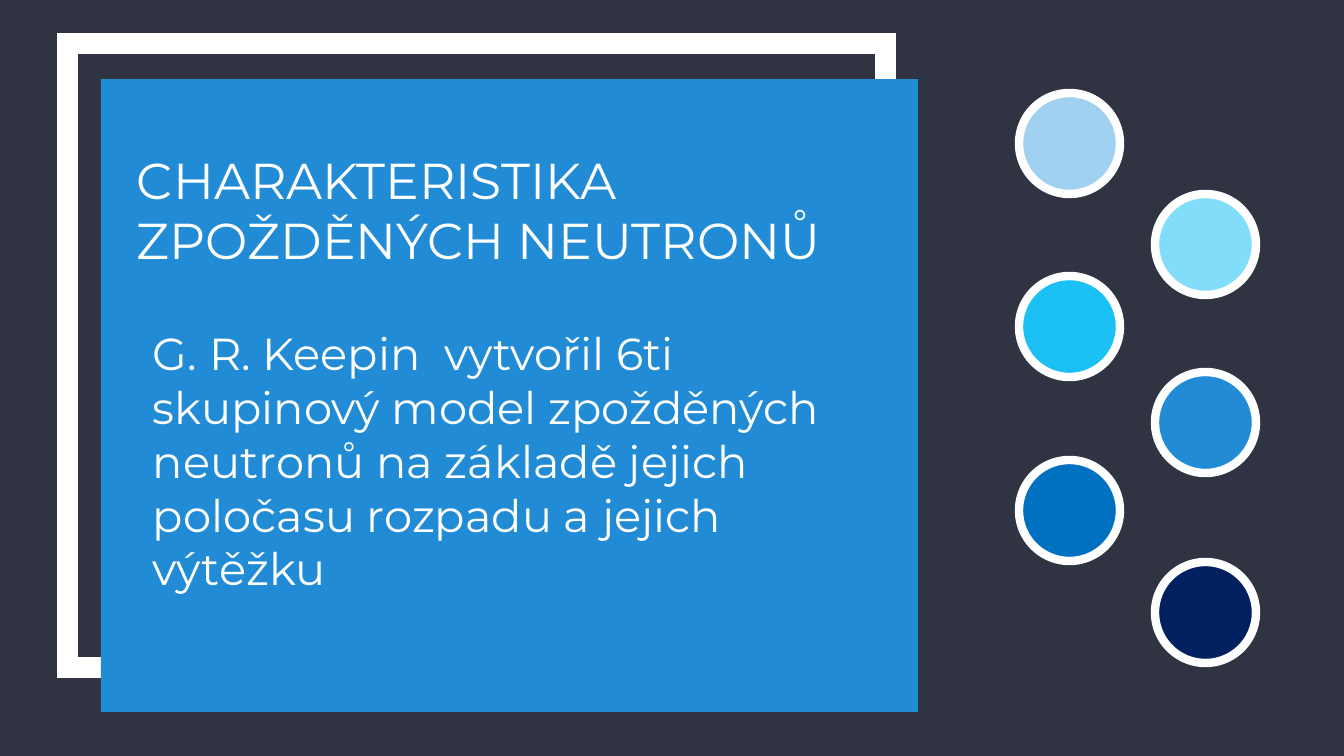
from dataclasses import dataclass

from lxml import etree
from pptx import Presentation
from pptx import util as u
from pptx.dml.color import RGBColor
from pptx.enum import shapes, text
from pptx.oxml import ns

EMU_PER_PX = 914400 / 100.8


@dataclass(frozen=True)
class Theme:
    background: str = "2F3342"
    panel: str = "218CD5"
    white: str = "FFFFFF"
    left_dots: tuple = ("A1D1F1", "1BC1F5", "0070C0")
    right_dots: tuple = ("82DDFA", "218CD5", "002060")
    font: str = "Montserrat"
    title_size: int = 36
    body_size: int = 32
    frame_width: int = 15
    dot_outline: int = 6


THEME = Theme()


def px(length):
    return u.Emu(round(length * EMU_PER_PX))


def color(value):
    return RGBColor.from_string(value)


def add_figure(slide, kind, box, fill=None, line=None, line_width=0):
    shape = slide.shapes.add_shape(kind, *map(px, box))
    shape.shadow.inherit = False
    if fill:
        shape.fill.solid()
        shape.fill.fore_color.rgb = color(fill)
    else:
        shape.fill.background()
    if line:
        shape.line.color.rgb = color(line)
        shape.line.width = u.Pt(line_width)
    else:
        shape.line.fill.background()
    return shape


def add_frame(slide, box):
    shape = add_figure(slide, shapes.MSO_SHAPE.RECTANGLE, box,
                       line=THEME.white, line_width=THEME.frame_width)
    outline = shape.line._get_or_add_ln()
    etree.SubElement(outline, ns.qn("a:miter"), lim="800000")


def add_text(slide, content, box, size, font=THEME.font, fill=THEME.white):
    shape = slide.shapes.add_textbox(*map(px, box))
    frame = shape.text_frame
    frame.word_wrap = True
    frame.auto_size = text.MSO_AUTO_SIZE.SHAPE_TO_FIT_TEXT
    run = frame.paragraphs[0].add_run()
    run.text = content
    run.font.name = font
    run.font.size = u.Pt(size)
    run.font.color.rgb = color(fill)


def add_dot_column(slide, left, tops, fills, diameter=101):
    for top, fill in zip(tops, fills):
        add_figure(slide, shapes.MSO_SHAPE.OVAL,
                   (left, top, diameter, diameter),
                   fill=fill, line=THEME.white, line_width=THEME.dot_outline)


def main():
    presentation = Presentation()
    presentation.slide_width = px(1344)
    presentation.slide_height = px(756)
    slide = presentation.slides.add_slide(presentation.slide_layouts[6])
    slide.background.fill.solid()
    slide.background.fill.fore_color.rgb = color(THEME.background)

    add_frame(slide, (68, 44, 818, 624))
    add_figure(slide, shapes.MSO_SHAPE.RECTANGLE, (101, 79, 817, 633),
               fill=THEME.panel)
    add_text(slide, "CHARAKTERISTIKA ZPOŽDĚNÝCH NEUTRONŮ",
             (127, 144, 766, 132), size=THEME.title_size)
    add_text(slide,
             "G. R. Keepin  vytvořil 6ti skupinový model zpožděných neutronů "
             "na základě jejich poločasu rozpadu a jejich výtěžku",
             (143, 321, 734, 281), size=THEME.body_size)
    add_dot_column(slide, 1019, (93, 276, 460), THEME.left_dots)
    add_dot_column(slide, 1155, (194, 372, 562), THEME.right_dots)

    presentation.save("out.pptx")


if __name__ == "__main__":
    main()
